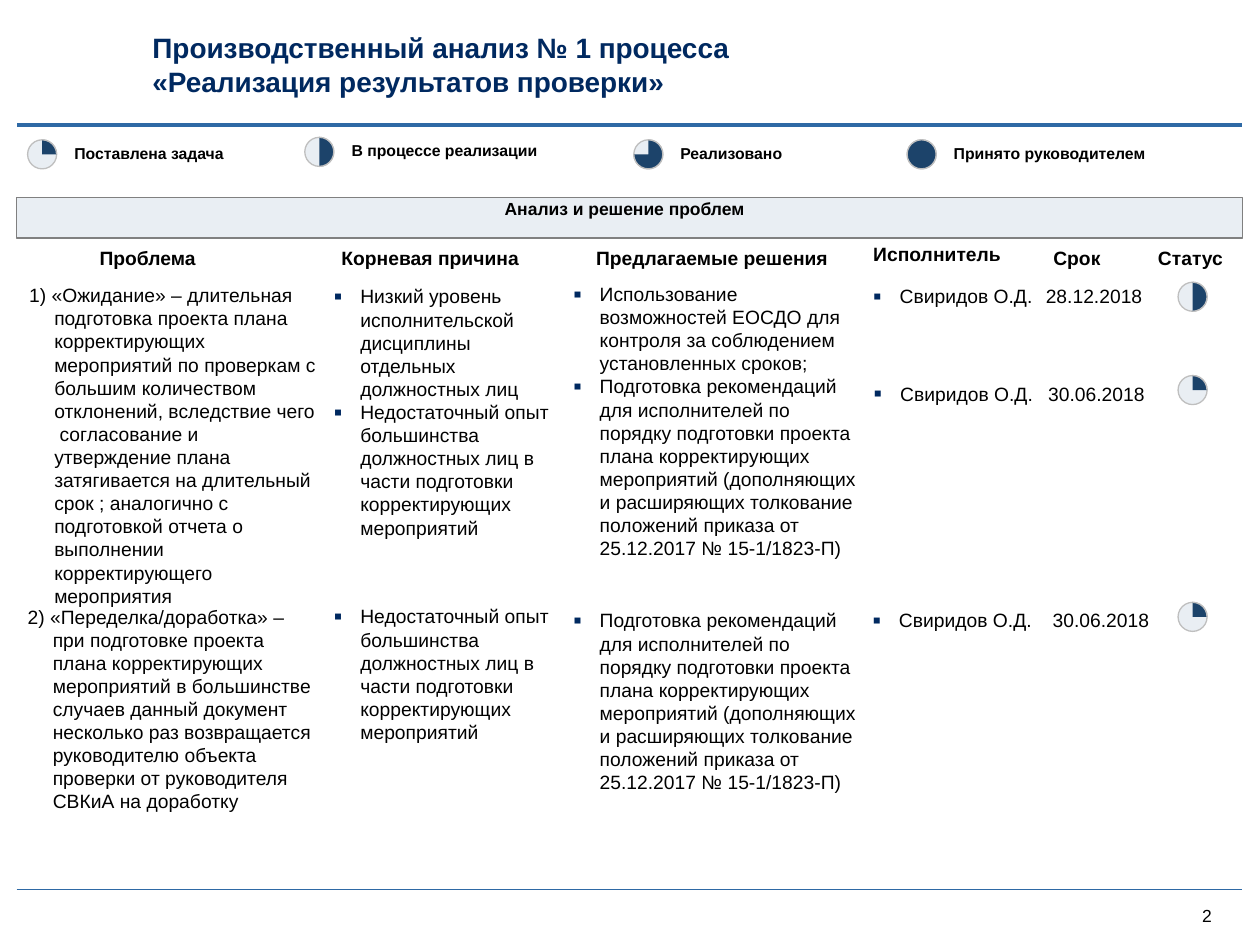
from pptx import Presentation
from pptx.dml.color import RGBColor
from pptx.enum.shapes import MSO_CONNECTOR, MSO_SHAPE
from pptx.enum.text import MSO_ANCHOR, PP_ALIGN
from pptx.oxml.ns import qn
from pptx.util import Pt
from lxml import etree

STRAIGHT = MSO_CONNECTOR.STRAIGHT
RECTANGLE, ELLIPSE, ARC = MSO_SHAPE.RECTANGLE, MSO_SHAPE.OVAL, MSO_SHAPE.ARC
TOP, MIDDLE, BOTTOM = MSO_ANCHOR.TOP, MSO_ANCHOR.MIDDLE, MSO_ANCHOR.BOTTOM
LEFT, CENTER = PP_ALIGN.LEFT, PP_ALIGN.CENTER

NAVY, BLUE, DARK, PALE = "002960", "2E69A5", "1C436A", "E9EEF3"
BLACK, GREY, SILVER = "000000", "808080", "BFBFBF"


def color(value):
    return RGBColor.from_string(value)


class SlideBuilder:
    font = "Arial"
    line_width = 0.75
    icon_size = 16.6
    bullet_indent = 15.12
    number_indent = 14.4

    def __init__(self, page):
        self.page = page

    def rule(self, left, right, y, width):
        line = self.page.shapes.add_connector(STRAIGHT, Pt(left), Pt(y), Pt(right), Pt(y))
        line.line.color.rgb = color(BLUE)
        line.line.width = Pt(width)
        etree.SubElement(line._element.spPr, qn("a:effectLst"))

    def shape(self, shapes, kind, left, top, width, height, fill, outline):
        shape = shapes.add_shape(kind, Pt(left), Pt(top), Pt(width), Pt(height))
        shape.shadow.inherit = False
        shape.fill.solid()
        shape.fill.fore_color.rgb = color(fill)
        shape.line.color.rgb = color(outline)
        shape.line.width = Pt(self.line_width)
        return shape

    def fill_text(self, shape, lines, size, bold=False, anchor=TOP, align=LEFT,
                  ink=BLACK, indent=0, bullet=False, wrap=True):
        frame = shape.text_frame
        frame.margin_left = frame.margin_top = frame.margin_right = frame.margin_bottom = 0
        frame.word_wrap = wrap
        frame.vertical_anchor = anchor
        frame.text = "\n".join(lines)
        for paragraph in frame.paragraphs:
            paragraph.alignment = align
            if indent:
                self.hang(paragraph, indent, bullet)
            for span in paragraph.runs:
                span.font.name = self.font
                span.font.size = Pt(size)
                span.font.bold = bold
                span.font.color.rgb = color(ink)
        return frame

    def hang(self, paragraph, indent, bullet):
        paragraph.level = 1
        properties = paragraph._p.get_or_add_pPr()
        properties.set("marL", str(Pt(indent)))
        properties.set("indent", str(-Pt(indent)))
        if bullet:
            tint = etree.SubElement(properties, qn("a:buClr"))
            etree.SubElement(tint, qn("a:srgbClr"), val=NAVY)
            etree.SubElement(properties, qn("a:buSzPct"), val="125000")
            etree.SubElement(properties, qn("a:buFont"), typeface=self.font)
            etree.SubElement(properties, qn("a:buChar"), char="▪")

    def text(self, left, top, width, height, lines, size=11, **style):
        box = self.page.shapes.add_textbox(Pt(left), Pt(top), Pt(width), Pt(height))
        return self.fill_text(box, lines, size, **style)

    def bullets(self, left, top, width, height, lines):
        self.text(left, top, width, height, lines, indent=self.bullet_indent, bullet=True)

    def band(self, left, top, width, height, label):
        band = self.shape(self.page.shapes, RECTANGLE, left, top, width, height, PALE, GREY)
        frame = self.fill_text(band, [label], 10, bold=True, align=CENTER)
        frame.margin_right = Pt(5.8)

    def progress(self, left, top, end_angle):
        shapes = self.page.shapes.add_group_shape().shapes
        place = (left, top, self.icon_size, self.icon_size)
        self.shape(shapes, ELLIPSE, *place, PALE, SILVER)
        sector = self.shape(shapes, ARC, *place, DARK, SILVER)
        # Angles are in units of 5/3 degree; 162 is twelve o'clock
        sector.adjustments[0] = 162
        sector.adjustments[1] = end_angle


QUARTER, HALF, THREE_QUARTERS, FULL = 0, 54, 108, 162

LACK_OF_EXPERIENCE = ("Недостаточный опыт большинства должностных лиц в части "
                      "подготовки корректирующих мероприятий")
RECOMMENDATIONS = ("Подготовка рекомендаций для исполнителей по порядку подготовки "
                   "проекта плана корректирующих мероприятий (дополняющих и "
                   "расширяющих толкование положений приказа от 25.12.2017 "
                   "№ 15-1/1823-П)")

# Icon left, icon top, label left, label width, end angle, label
LEGEND = [
    (15.8, 79.9, 42.5, 89, QUARTER, "Поставлена задача"),
    (174.2, 78.5, 200.9, 111, HALF, "В процессе реализации"),
    (362.2, 79.9, 388.8, 61, THREE_QUARTERS, "Реализовано"),
    (518.4, 79.9, 545, 115, FULL, "Принято руководителем"),
]

# Left, top, width, label
HEADERS = [
    (56.9, 140.4, 84, "Проблема"),
    (195.1, 140.4, 109, "Корневая причина"),
    (340.6, 140.4, 145, "Предлагаемые решения"),
    (499, 138.2, 86, "Исполнитель"),
    (601.9, 140.4, 41, "Срок"),
    (661.7, 140.4, 48, "Статус"),
]

# Left, top, height, text
PROBLEMS = [
    (16.6, 162, 174,
     "1) «Ожидание» – длительная подготовка проекта плана корректирующих "
     "мероприятий по проверкам с большим количеством отклонений, вследствие "
     "чего  согласование и утверждение плана затягивается на длительный срок ; "
     "аналогично с подготовкой отчета о выполнении корректирующего мероприятия"),
    (15.8, 345.6, 120,
     "2) «Переделка/доработка» – при подготовке проекта плана корректирующих "
     "мероприятий в большинстве случаев данный документ несколько раз "
     "возвращается руководителю объекта проверки от руководителя СВКиА на "
     "доработку"),
]

# Top, height, paragraphs
CAUSES = [
    (162.7, 147, ["Низкий уровень исполнительской дисциплины отдельных "
                  "должностных лиц", LACK_OF_EXPERIENCE]),
    (345.6, 80, [LACK_OF_EXPERIENCE]),
]
SOLUTIONS = [
    (161.3, 160, ["Использование возможностей ЕОСДО для контроля за соблюдением "
                  "установленных сроков;", RECOMMENDATIONS]),
    (347.8, 107, [RECOMMENDATIONS]),
]

# Text top, person left, date left, date, icon top, end angle
ASSIGNMENTS = [
    (162.7, 499, 597.6, "28.12.2018", 161.3, HALF),
    (218.2, 499.3, 599, "30.06.2018", 214.6, QUARTER),
    (347.8, 498.6, 601.5, "30.06.2018", 344.2, QUARTER),
]


def main():
    deck = Presentation()
    deck.slide_width, deck.slide_height = Pt(720), Pt(540)
    builder = SlideBuilder(deck.slides.add_slide(deck.slide_layouts[6]))

    # Frame: rules, page number and title
    builder.rule(9.5, 710, 508.3, 0.75)
    builder.rule(10, 710, 71.3, 2.25)
    builder.text(686.9, 517, 16.6, 12.2, ["2"], size=10, anchor=MIDDLE, wrap=False)
    builder.text(87.1, 17.3, 572, 38.9,
                 ["Производственный анализ № 1 процесса",
                  "«Реализация результатов проверки»"],
                 size=16, bold=True, ink=NAVY, anchor=MIDDLE)

    # Status legend
    for icon_left, icon_top, left, width, angle, label in LEGEND:
        builder.progress(icon_left, icon_top, angle)
        builder.text(left, icon_top + 2.2, width, 10.8, [label], size=9, bold=True)

    # Section band and column headers
    builder.band(9.4, 113, 700.6, 23, "Анализ и решение проблем")
    for left, top, width, label in HEADERS:
        frame = builder.text(left, top, width, 15.1, [label], bold=True, anchor=BOTTOM)
        frame.margin_bottom = Pt(1.4)

    # Problems, causes and solutions
    for left, top, height, problem in PROBLEMS:
        builder.text(left, top, 166.3, height, [problem], indent=builder.number_indent)
    for top, height, causes in CAUSES:
        builder.bullets(190.8, top, 124.6, height, causes)
    for top, height, solutions in SOLUTIONS:
        builder.bullets(327.6, top, 165.6, height, solutions)

    # People, dates and progress
    for top, person_left, date_left, date, icon_top, angle in ASSIGNMENTS:
        builder.bullets(person_left, top, 100, 13.7, ["Свиридов О.Д."])
        builder.text(date_left, top, 64, 13.7, [date])
        builder.progress(673.2, icon_top, angle)

    deck.save("out.pptx")


if __name__ == "__main__":
    main()
